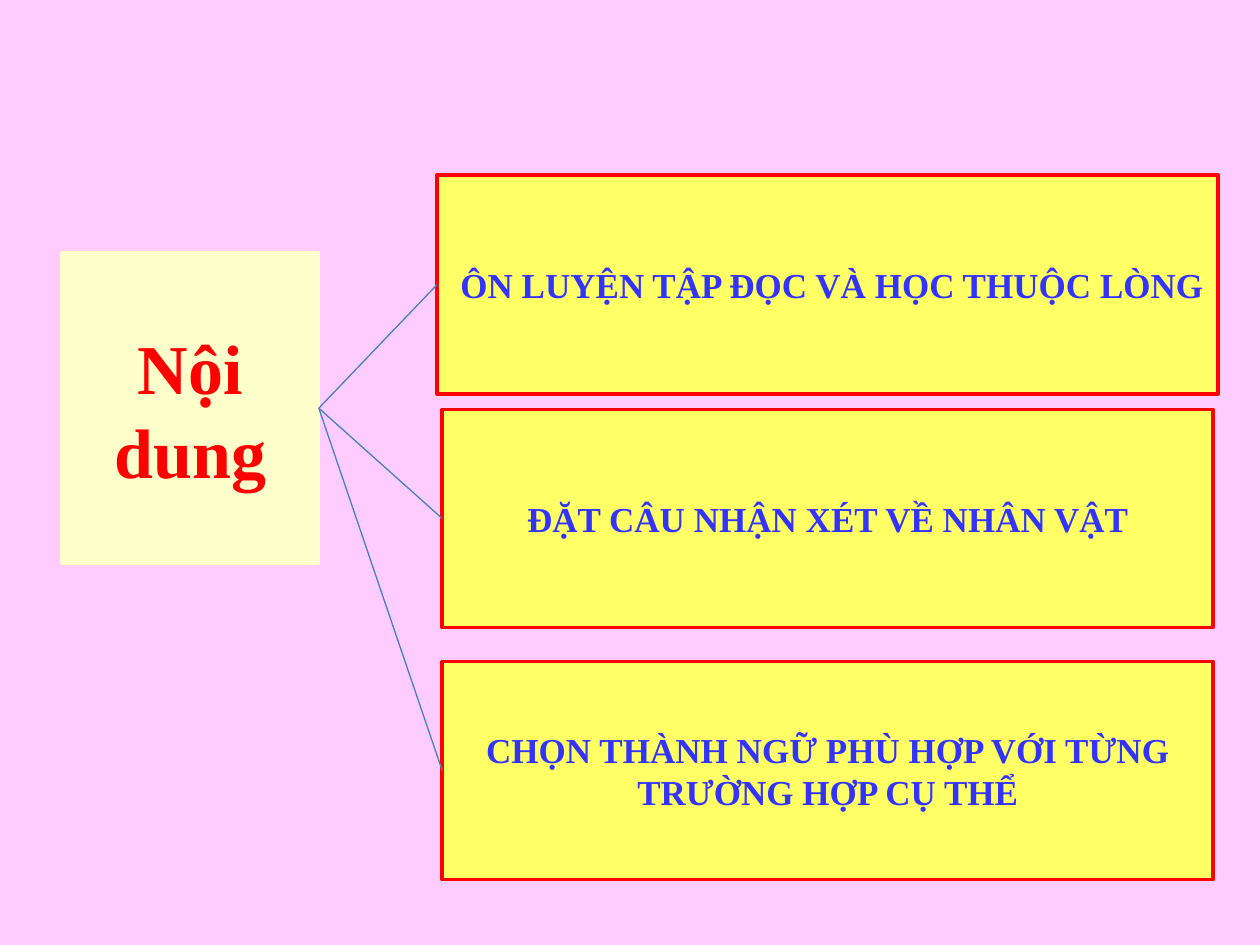
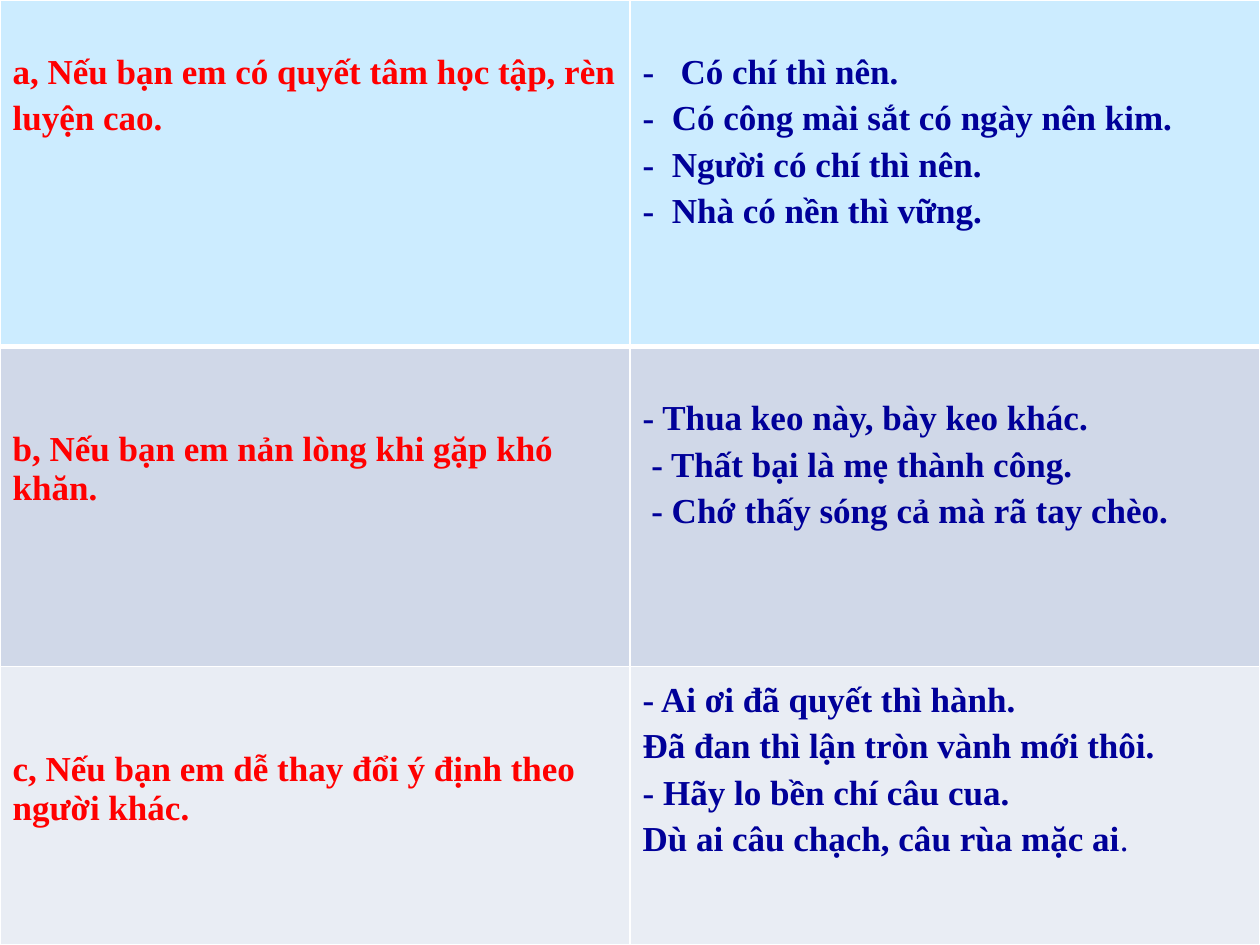
from dataclasses import dataclass
from lxml.etree import SubElement
from pptx import Presentation
from pptx.dml.color import RGBColor
from pptx.enum.shapes import MSO_CONNECTOR as Connector, MSO_SHAPE as Shape
from pptx.enum.text import MSO_ANCHOR as Anchor, PP_ALIGN as Align
from pptx.oxml import parse_xml
from pptx.oxml.ns import nsdecls, qn
from pptx.util import Pt

# Content: topic boxes as text, left, top, width, height
HUB = ("Nội dung", 35.3, 144.7, 146.9, 177.1)
TOPICS = [
    (" ÔN LUYỆN TẬP ĐỌC VÀ HỌC THUỘC LÒNG", 249.8, 100.1, 446.4, 125),
    ("ĐẶT CÂU NHẬN XÉT VỀ NHÂN VẬT", 252.7, 234, 440.6, 124.6),
    ("CHỌN THÀNH NGỮ PHÙ HỢP VỚI TỪNG TRƯỜNG HỢP CỤ THỂ", 252.7, 378, 440.6, 124.6),
]

# Each case: lines left open above it, its line spacing, text.
# Each list of sayings: lines left open above it, then the sayings;
# a tab separates a dash from its saying.
CASES = [
    dict(height=198, fill="CCECFF",
         case=(1, 1.2, "a, Nếu bạn em có quyết tâm học tập, rèn luyện cao."),
         sayings=(1, ["-\tCó chí thì nên.", "-\tCó công mài sắt có ngày nên kim.",
                      "-\tNgười có chí thì nên.", "-\tNhà có nền thì vững."]),
         tabs=[21.7, 16.7, 16.7, 16.7]),
    dict(height=183, fill="D0D8E8",
         case=(2, 1.0, "b, Nếu bạn em nản lòng khi gặp khó khăn."),
         sayings=(1, ["- Thua keo này, bày keo khác.", " - Thất bại là mẹ thành công.",
                      " - Chớ thấy sóng cả mà rã tay chèo."])),
    dict(height=159, fill="E9EDF4",
         case=(2, 1.0, "c, Nếu bạn em dễ thay đổi ý định theo người khác."),
         sayings=(0, ["- Ai ơi đã quyết thì hành.", "Đã đan thì lận tròn vành mới thôi.",
                      "- Hãy lo bền chí câu cua.", "Dù ai câu chạch, câu rùa mặc ai"]),
         plain_end="."),
]


@dataclass(frozen=True)
class Theme:
    font: str = "Times New Roman"
    hub_size: int = 40
    text_size: int = 20
    line_height: float = 22.14
    cell_inset: float = 3.6
    pink: str = "FFCCFF"
    peach: str = "FCD5B5"
    cream: str = "FFFFCC"
    yellow: str = "FFFF66"
    red: str = "FF0000"
    blue: str = "3333FF"
    navy: str = "000099"
    link: str = "4B7EBC"
    white: str = "FFFFFF"


THEME = Theme()


def rgb(value):
    return RGBColor.from_string(value)


def add_page(deck, color):
    page = deck.slides.add_slide(deck.slide_layouts[6])
    page.background.fill.solid()
    page.background.fill.fore_color.rgb = rgb(color)
    return page


def add_span(para, text, color, size=THEME.text_size, bold=True):
    span = para.add_run()
    span.text = text
    formats = dict(name=THEME.font, size=Pt(size), bold=bold)
    for name, value in formats.items():
        setattr(span.font, name, value)
    span.font.color.rgb = rgb(color)


def add_box(page, content, fill, line, color, size):
    text, *place = content
    box = page.shapes.add_shape(Shape.RECTANGLE, *map(Pt, place))
    box.shadow.inherit = False
    box.fill.solid()
    box.fill.fore_color.rgb = rgb(fill)
    box.line.color.rgb = rgb(line)
    box.line.width = Pt(2)
    for name, value in dict(word_wrap=True, vertical_anchor=Anchor.MIDDLE).items():
        setattr(box.text_frame, name, value)
    para = box.text_frame.paragraphs[0]
    para.alignment = Align.CENTER
    add_span(para, text, color, size)
    return box


def join(page, start, end):
    """Link the right side of one box to the left side of another."""
    link = page.shapes.add_connector(Connector.STRAIGHT, 0, 0, 0, 0)
    link.begin_connect(start, 3)
    link.end_connect(end, 1)
    link.line.color.rgb = rgb(THEME.link)
    link.line.width = Pt(0.75)
    SubElement(link._element.spPr, qn("a:effectLst"))


def add_tab_stop(para, position):
    tabs = SubElement(para._p.get_or_add_pPr(), qn("a:tabLst"))
    SubElement(tabs, qn("a:tab"), pos=str(Pt(position)), algn="l")


def set_borders(cell, widths):
    props = cell._tc.get_or_add_tcPr()
    for index, (side, width) in enumerate(widths.items()):
        props.insert(index, parse_xml(
            f'<a:{side} {nsdecls("a")} w="{Pt(width)}"><a:solidFill>'
            f'<a:srgbClr val="{THEME.white}"/></a:solidFill></a:{side}>'))


def fill_cell(cell, lines, color, open_lines, spacing):
    cell.margin_top = Pt(THEME.cell_inset + open_lines * THEME.line_height)
    frame = cell.text_frame
    for index, text in enumerate(lines):
        para = frame.add_paragraph() if index else frame.paragraphs[0]
        para.line_spacing = spacing
        add_span(para, text, color)


def build_contents(deck):
    page = add_page(deck, THEME.pink)
    hub = add_box(page, HUB, THEME.cream, THEME.cream, THEME.red, THEME.hub_size)
    for topic in TOPICS:
        box = add_box(page, topic, THEME.yellow, THEME.red, THEME.blue, THEME.text_size)
        join(page, hub, box)


def build_sayings(deck):
    page = add_page(deck, THEME.peach)
    table = page.shapes.add_table(len(CASES), 2, 0, 0,
                                  deck.slide_width, deck.slide_height).table
    table.first_row = table.horz_banding = False
    for number, entry in enumerate(CASES):
        table.rows[number].height = Pt(entry["height"])
        left, right = table.rows[number].cells

        # Case on the left, sayings on the right
        open_lines, spacing, text = entry["case"]
        fill_cell(left, [text], THEME.red, open_lines, spacing)
        open_lines, sayings = entry["sayings"]
        fill_cell(right, sayings, THEME.navy, open_lines, 1.2)
        paras = right.text_frame.paragraphs
        for para, position in zip(paras, entry.get("tabs", [])):
            add_tab_stop(para, position)
        if "plain_end" in entry:
            add_span(paras[-1], entry["plain_end"], THEME.navy, bold=False)

        # Fill and borders, with a heavy rule under the first row
        for cell in (left, right):
            cell.fill.solid()
            cell.fill.fore_color.rgb = rgb(entry["fill"])
            set_borders(cell, dict(lnL=1, lnR=1, lnT=3 if number == 1 else 1,
                                   lnB=3 if number == 0 else 1))


def main():
    deck = Presentation()
    deck.slide_width, deck.slide_height = Pt(720), Pt(540)
    build_contents(deck)
    build_sayings(deck)
    deck.save("out.pptx")


if __name__ == "__main__":
    main()
